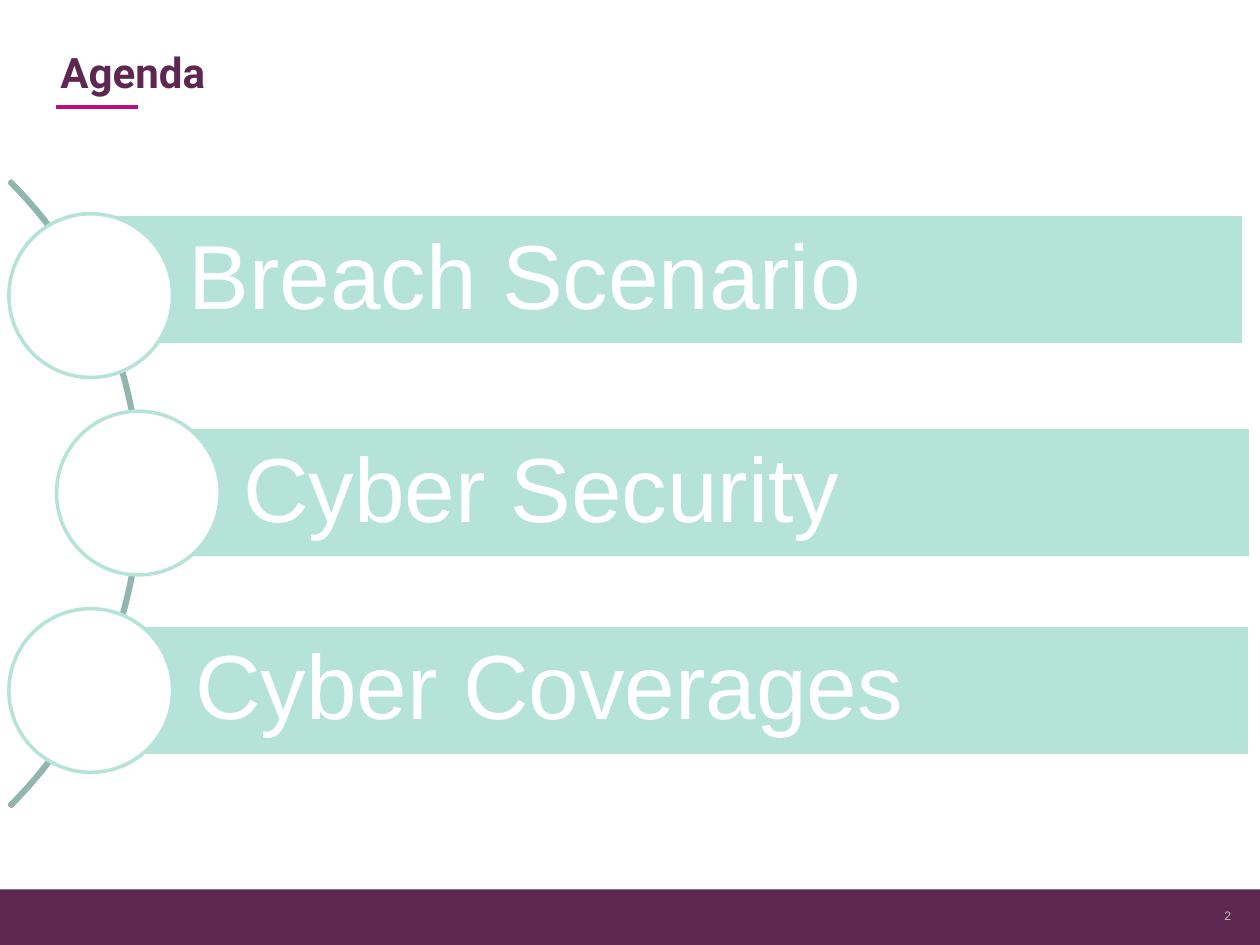
import pptx
import pptx.util
import pptx.dml.color
import pptx.enum.shapes
import pptx.enum.text
import pptx.oxml.ns
import lxml.etree
from dataclasses import dataclass

Cm = pptx.util.Cm
Pt = pptx.util.Pt
Kind = pptx.enum.shapes.MSO_SHAPE
Align = pptx.enum.text.PP_ALIGN
Anchor = pptx.enum.text.MSO_ANCHOR


@dataclass(frozen=True)
class Theme:
    plum: str = "5E2751"
    pink: str = "BA0E82"
    mint: str = "B5E3D8"
    sage: str = "91B6AD"
    grey: str = "C2C2C2"
    white: str = "FFFFFF"
    head: str = "Roboto"
    body: str = "Arial"
    title: int = 24
    item: int = 52
    small: int = 7
    line: int = 2


def color(code):
    return pptx.dml.color.RGBColor.from_string(code)


def write(shape, text, *, font, size, ink, bold=False, align=Align.LEFT,
          anchor=Anchor.TOP, pads=None, space=None):
    """Fill a shape with one formatted paragraph; pads are in cm."""
    frame = shape.text_frame
    frame.word_wrap = True
    frame.vertical_anchor = anchor
    if pads:
        (frame.margin_left, frame.margin_top,
         frame.margin_right, frame.margin_bottom) = map(Cm, pads)
    para = frame.paragraphs[0]
    para.alignment = align
    if space:
        para.line_spacing = space
    run = para.add_run()
    run.text = text
    run.font.name = font
    run.font.size = Pt(size)
    run.font.bold = bold
    run.font.color.rgb = color(ink)


class Deck:
    def __init__(self, theme):
        self.theme = theme
        self.file = pptx.Presentation()
        self.file.slide_width = Cm(25.4)
        self.file.slide_height = Cm(19.05)
        self.slide = self.file.slides.add_slide(self.file.slide_layouts[6])

    def shape(self, kind, box, fill, line=None):
        item = self.slide.shapes.add_shape(kind, *map(Cm, box))
        item.shadow.inherit = False
        item.fill.solid()
        item.fill.fore_color.rgb = color(fill)
        if line:
            item.line.color.rgb = color(line)
            item.line.width = Pt(self.theme.line)
        else:
            item.line.fill.background()
        return item

    def label(self, box, text, **style):
        item = self.slide.shapes.add_textbox(*map(Cm, box))
        write(item, text, **style)
        return item

    def rule(self, ends, ink):
        item = self.slide.shapes.add_connector(
            pptx.enum.shapes.MSO_CONNECTOR.STRAIGHT, *map(Cm, ends))
        item.line.color.rgb = color(ink)
        item.line.width = Pt(self.theme.line)
        props = item._element.spPr
        lxml.etree.SubElement(props, pptx.oxml.ns.qn("a:effectLst"))
        return item

    def arc(self, box, turns, ink):
        item = self.shape(Kind.BLOCK_ARC, box, ink, ink)
        for i, turn in enumerate(turns):
            item.adjustments[i] = turn
        return item


def main():
    theme = Theme()
    deck = Deck(theme)

    # Footer band and page number
    deck.shape(Kind.RECTANGLE, (0, 17.93, 25.4, 1.12), theme.plum)
    deck.label((23.6, 18.14, 1.22, 0.64), "2", font=theme.body,
               size=theme.small, ink=theme.grey, align=Align.RIGHT,
               anchor=Anchor.MIDDLE, pads=(0, 0, 0, 0))

    # Title with its underline
    deck.rule((1.12, 2.16, 2.79, 2.16), theme.pink)
    deck.label((0.97, 0.81, 17.96, 1.27), "Agenda", font=theme.head,
               size=theme.title, ink=theme.plum, bold=True)

    # Curve behind the agenda
    deck.arc((-14.99, 1.04, 17.83, 17.83), (189, 27, 0.003), theme.sage)

    # Agenda: bar left, top, width, then circle left
    items = [
        ("Breach Scenario", 1.7, 4.32, 23.37, 0.18),
        ("Cyber Security", 2.79, 8.61, 22.43, 1.14),
        ("Cyber Coverages", 1.83, 12.6, 23.37, 0.18),
    ]
    first, step, size = 4.31, 3.98, 3.3
    for i, (text, left, top, width, dot) in enumerate(items):
        bar = deck.shape(Kind.RECTANGLE, (left, top, width, 2.64),
                         theme.mint, theme.white)
        write(bar, text, font=theme.body, size=theme.item, ink=theme.white,
              anchor=Anchor.MIDDLE, pads=(2.11, 0.36, 0.36, 0.36), space=0.9)
        deck.shape(Kind.OVAL, (dot, first + i * step, size, size),
                   theme.white, theme.mint)

    deck.file.save("out.pptx")


if __name__ == "__main__":
    main()
